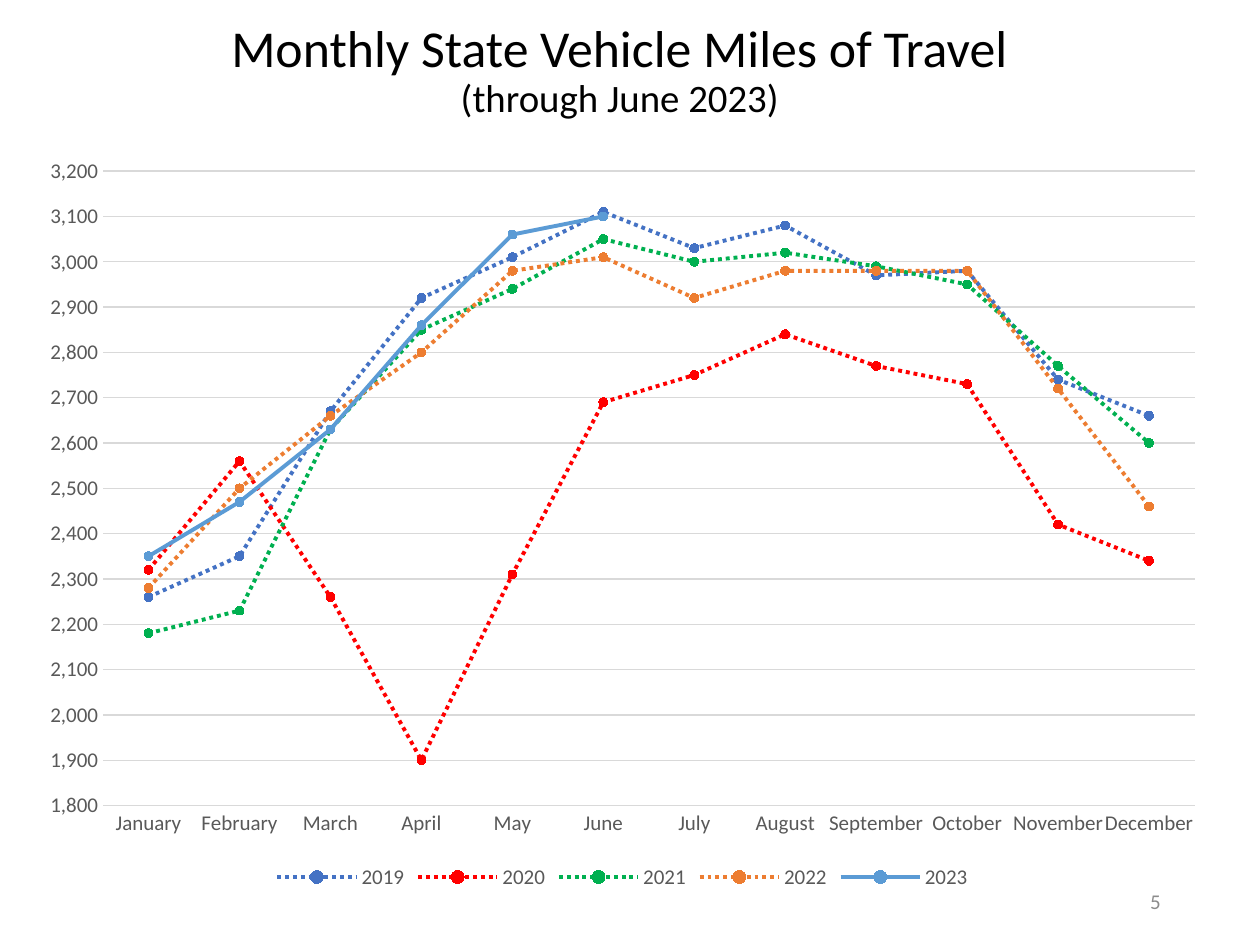
from pptx import Presentation
from pptx.chart.data import CategoryChartData
from pptx.dml.color import RGBColor
from pptx.enum.chart import XL_CHART_TYPE, XL_LEGEND_POSITION, XL_MARKER_STYLE, XL_TICK_MARK
from pptx.enum.dml import MSO_LINE
from pptx.enum.text import MSO_ANCHOR, PP_ALIGN
from pptx.util import Inches, Pt

MONTHS = ["January", "February", "March", "April", "May", "June", "July",
          "August", "September", "October", "November", "December"]
MILES_BY_YEAR = {
    "2019": [2260, 2350, 2670, 2920, 3010, 3110, 3030, 3080, 2970, 2980, 2740, 2660],
    "2020": [2320, 2560, 2260, 1900, 2310, 2690, 2750, 2840, 2770, 2730, 2420, 2340],
    "2021": [2180, 2230, 2630, 2850, 2940, 3050, 3000, 3020, 2990, 2950, 2770, 2600],
    "2022": [2280, 2500, 2660, 2800, 2980, 3010, 2920, 2980, 2980, 2980, 2720, 2460],
    "2023": [2350, 2470, 2630, 2860, 3060, 3100] + [None] * 6,
}
YEAR_COLORS = {"2019": "4472C4", "2020": "FF0000", "2021": "00B050",
               "2022": "ED7D31", "2023": "5B9BD5"}
CURRENT_YEAR = "2023"


def color(hex_string):
    return RGBColor.from_string(hex_string)


class SlideBuilder:
    font_name = "Calibri"
    label_color = "595959"
    grid_color = "D9D9D9"
    label_size = 12

    def __init__(self, slide):
        self.slide = slide

    def style_font(self, font, size, hex_string):
        font.name = self.font_name
        font.size = Pt(size)
        font.bold = False
        font.color.rgb = color(hex_string)

    def style_line(self, line, hex_string, width):
        line.color.rgb = color(hex_string)
        line.width = Pt(width)

    def text(self, left, top, width, height, lines, hex_string, align, anchor, spacing=1.0):
        """Add a text box; lines is a list of (text, point size)."""
        box = self.slide.shapes.add_textbox(
            Inches(left), Inches(top), Inches(width), Inches(height))
        frame = box.text_frame
        frame.word_wrap = True
        frame.vertical_anchor = anchor
        frame.text = "\n".join(text for text, size in lines)
        for para, (text, size) in zip(frame.paragraphs, lines):
            para.alignment = align
            para.line_spacing = spacing
            self.style_font(para.runs[0].font, size, hex_string)

    def line_chart(self, left, top, width, height):
        data = CategoryChartData(number_format="#,##0")
        data.categories = MONTHS
        for year, miles in MILES_BY_YEAR.items():
            data.add_series(year, miles)
        chart = self.slide.shapes.add_chart(
            XL_CHART_TYPE.LINE_MARKERS, Inches(left), Inches(top),
            Inches(width), Inches(height), data).chart
        chart.has_title = False
        self.style_font(chart.font, 10, "000000")
        chart.plots[0].vary_by_categories = False
        for series in chart.plots[0].series:
            self.style_series(series)
        self.style_axes(chart.category_axis, chart.value_axis)
        chart.has_legend = True
        chart.legend.position = XL_LEGEND_POSITION.BOTTOM
        chart.legend.include_in_layout = False
        self.style_font(chart.legend.font, self.label_size, self.label_color)

    def style_series(self, series):
        year_color = YEAR_COLORS[series.name]
        series.smooth = False
        self.style_line(series.format.line, year_color, 2.25)
        if series.name != CURRENT_YEAR:
            series.format.line.dash_style = MSO_LINE.ROUND_DOT
        marker = series.marker
        marker.style = XL_MARKER_STYLE.CIRCLE
        marker.size = 5
        marker.format.fill.solid()
        marker.format.fill.fore_color.rgb = color(year_color)
        self.style_line(marker.format.line, year_color, 0.75)

    def style_axes(self, month_axis, miles_axis):
        for axis in (month_axis, miles_axis):
            axis.major_tick_mark = XL_TICK_MARK.NONE
            axis.minor_tick_mark = XL_TICK_MARK.NONE
            self.style_font(axis.tick_labels.font, self.label_size, self.label_color)
        self.style_line(month_axis.format.line, self.grid_color, 0.75)
        miles_axis.format.line.fill.background()
        miles_axis.minimum_scale = 1800
        miles_axis.maximum_scale = 3200
        miles_axis.major_unit = 100
        miles_axis.tick_labels.number_format = "#,##0"
        miles_axis.tick_labels.number_format_is_linked = False
        miles_axis.has_major_gridlines = True
        self.style_line(miles_axis.major_gridlines.format.line, self.grid_color, 0.75)


def main():
    deck = Presentation()
    deck.slide_width, deck.slide_height = Inches(10), Inches(7.5)
    page = SlideBuilder(deck.slides.add_slide(deck.slide_layouts[6]))
    page.line_chart(0.21, 1.14, 9.46, 5.96)
    page.text(7.06, 6.95, 2.25, 0.4, [("5", 12)], "8C8C8C",
              PP_ALIGN.RIGHT, MSO_ANCHOR.MIDDLE)
    page.text(0.61, 0.08, 8.62, 0.93,
              [("Monthly State Vehicle Miles of Travel", 29.6),
               ("(through June 2023)", 22.2)],
              "000000", PP_ALIGN.CENTER, MSO_ANCHOR.BOTTOM, spacing=0.9)
    deck.save("out.pptx")


if __name__ == "__main__":
    main()
